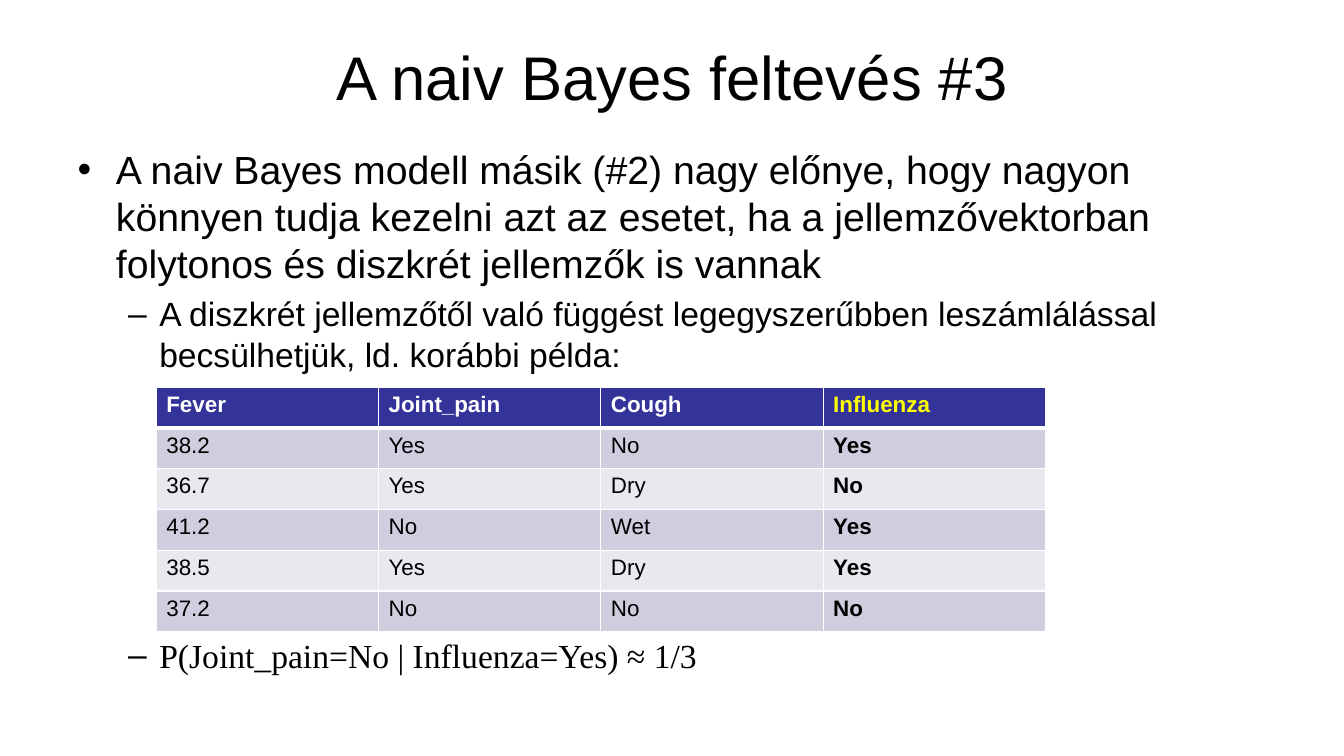
from lxml import etree
from pptx import Presentation
from pptx.dml.color import RGBColor
from pptx.enum.text import MSO_ANCHOR, PP_ALIGN
from pptx.oxml.ns import qn
from pptx.util import Inches, Pt

BLACK = RGBColor(0x00, 0x00, 0x00)
WHITE = RGBColor(0xFF, 0xFF, 0xFF)
YELLOW = RGBColor(0xFF, 0xFF, 0x00)
HEADER_BLUE = RGBColor(0x33, 0x33, 0x99)
BAND_DARK = RGBColor(0xCE, 0xCE, 0xDE)
BAND_LIGHT = RGBColor(0xE8, 0xE8, 0xEF)
CENTER = PP_ALIGN.CENTER
LEFT = PP_ALIGN.LEFT
MIDDLE = MSO_ANCHOR.MIDDLE
TOP = MSO_ANCHOR.TOP

TITLE = "A naiv Bayes feltevés #3"
# Text, level, bullet, left margin and hanging indent in inches, space before, font
BULLETS = [
    ("A naiv Bayes modell másik (#2) nagy előnye, hogy nagyon könnyen tudja kezelni "
     "azt az esetet, ha a jellemzővektorban folytonos és diszkrét jellemzők is vannak",
     0, "•", 0.38, 0.38, 0, {"name": "Arial", "size": Pt(28)}),
    ("A diszkrét jellemzőtől való függést legegyszerűbben leszámlálással "
     "becsülhetjük, ld. korábbi példa:",
     1, "–", 0.81, 0.31, 5, {"name": "Arial", "size": Pt(24)}),
    ("P(Joint_pain=No | Influenza=Yes) ≈ 1/3",
     1, "–", 0.81, 0.31, 186, {"name": "Times New Roman", "size": Pt(24)}),
]
PATIENTS = [
    ("Fever", "Joint_pain", "Cough", "Influenza"),
    ("38.2", "Yes", "No", "Yes"),
    ("36.7", "Yes", "Dry", "No"),
    ("41.2", "No", "Wet", "Yes"),
    ("38.5", "Yes", "Dry", "Yes"),
    ("37.2", "No", "No", "No"),
]


def set_font(font, color, **values):
    font.color.rgb = color
    for name, value in values.items():
        setattr(font, name, value)


def place(shape, box):
    for name, length in zip(("left", "top", "width", "height"), box):
        setattr(shape, name, Inches(length))


def add_title(slide, box):
    title = slide.shapes.title
    place(title, box)
    title.text_frame.text = TITLE
    title.text_frame.vertical_anchor = MIDDLE
    paragraph = title.text_frame.paragraphs[0]
    paragraph.alignment = CENTER
    set_font(paragraph.runs[0].font, BLACK, name="Arial", size=Pt(44))


def set_bullet(paragraph, character, margin, hanging):
    properties = paragraph._p.get_or_add_pPr()
    properties.set("marL", str(Inches(margin)))
    properties.set("indent", str(-Inches(hanging)))
    etree.SubElement(properties, qn("a:buFont")).set("typeface", "Arial")
    etree.SubElement(properties, qn("a:buChar")).set("char", character)


def add_bullets(slide, box):
    """Fill the body; the space before the last item leaves room for the table."""
    body = slide.placeholders[1]
    place(body, box)
    frame = body.text_frame
    frame.vertical_anchor = TOP
    for index, (text, level, character, margin, hanging, space, font) in enumerate(BULLETS):
        paragraph = frame.add_paragraph() if index else frame.paragraphs[0]
        paragraph.level = level
        paragraph.alignment = LEFT
        paragraph.space_before = Pt(space)
        set_bullet(paragraph, character, margin, hanging)
        run = paragraph.add_run()
        run.text = text
        set_font(run.font, BLACK, **font)


def set_borders(cell, bottom_width):
    properties = cell._tc.get_or_add_tcPr()
    widths = {"a:lnL": 1, "a:lnR": 1, "a:lnT": 1, "a:lnB": bottom_width}
    for index, (tag, width) in enumerate(widths.items()):
        line = etree.Element(qn(tag), w=str(Pt(width)))
        fill = etree.SubElement(line, qn("a:solidFill"))
        etree.SubElement(fill, qn("a:srgbClr")).set("val", str(WHITE))
        properties.insert(index, line)


def add_patient_table(slide, box):
    row_count, column_count = len(PATIENTS), len(PATIENTS[0])
    left, top, width, height = map(Inches, box)
    table = slide.shapes.add_table(row_count, column_count, left, top, width, height).table
    for row_index, row in enumerate(PATIENTS):
        header = row_index == 0
        band = BAND_DARK if row_index % 2 else BAND_LIGHT
        for column_index, text in enumerate(row):
            outcome = column_index == column_count - 1
            cell = table.cell(row_index, column_index)
            cell.text = text
            cell.fill.solid()
            cell.fill.fore_color.rgb = HEADER_BLUE if header else band
            set_borders(cell, 3 if header else 1)
            header_color = YELLOW if outcome else WHITE
            set_font(cell.text_frame.paragraphs[0].runs[0].font,
                     header_color if header else BLACK,
                     name="Arial", size=Pt(16), bold=header or outcome)


def main():
    presentation = Presentation()
    presentation.slide_width = Inches(13.33)
    presentation.slide_height = Inches(7.5)
    slide = presentation.slides.add_slide(presentation.slide_layouts[1])
    add_title(slide, (0.67, 0.13, 12, 1.25))
    add_bullets(slide, (0.67, 1.39, 11.43, 4.95))
    add_patient_table(slide, (1.55, 3.84, 8.82, 2.43))
    presentation.save("out.pptx")


if __name__ == "__main__":
    main()
